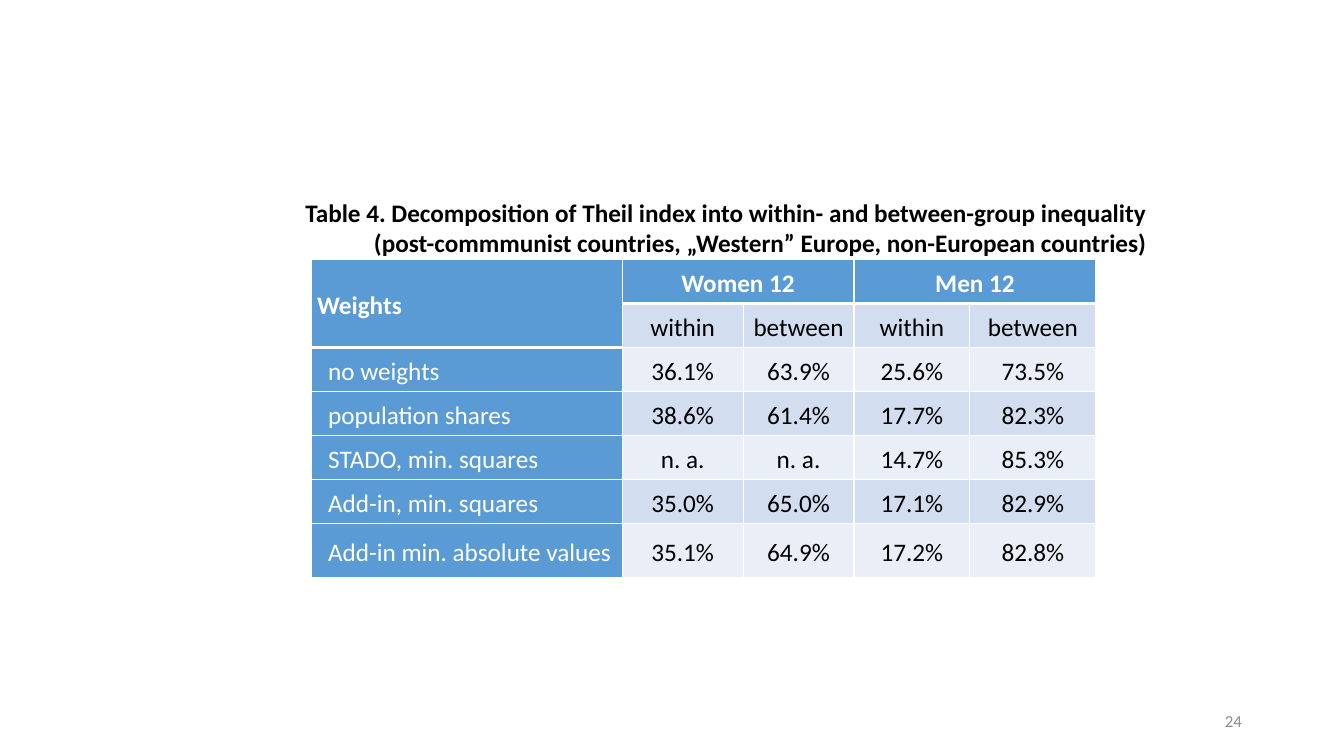
from lxml import etree
from pptx import Presentation
from pptx.dml.color import RGBColor
from pptx.enum.text import MSO_ANCHOR, MSO_AUTO_SIZE, PP_ALIGN
from pptx.oxml.ns import qn
from pptx.util import Cm, Pt

LEFT, CENTER, RIGHT = PP_ALIGN.LEFT, PP_ALIGN.CENTER, PP_ALIGN.RIGHT
MIDDLE = MSO_ANCHOR.MIDDLE
GROW = MSO_AUTO_SIZE.SHAPE_TO_FIT_TEXT

WHITE = RGBColor(0xFF, 0xFF, 0xFF)
BLACK = RGBColor(0x00, 0x00, 0x00)
GRAY = RGBColor(0x8C, 0x8C, 0x8C)
BLUE = RGBColor(0x5B, 0x9B, 0xD5)
DARK_BAND = RGBColor(0xD2, 0xDE, 0xEF)
LIGHT_BAND = RGBColor(0xEA, 0xEF, 0xF7)

CAPTION = [
    "Table 4. Decomposition of Theil index into within- and between-group inequality",
    "(post-commmunist countries, „Western” Europe, non-European countries)",
]
ROWS = [
    ["Weights", "Women 12", "", "Men 12", ""],
    ["", "within", "between", "within", "between"],
    ["no weights", "36.1%", "63.9%", "25.6%", "73.5%"],
    ["population shares", "38.6%", "61.4%", "17.7%", "82.3%"],
    ["STADO, min. squares", "n. a.", "n. a.", "14.7%", "85.3%"],
    ["Add-in, min. squares", "35.0%", "65.0%", "17.1%", "82.9%"],
    ["Add-in min. absolute values", "35.1%", "64.9%", "17.2%", "82.8%"],
]
COLUMN_WIDTHS = [7.82, 3.05, 2.79, 2.92, 3.18]
ROW_HEIGHTS = [1.11] * 6 + [1.35]


def write(para, text, align, size, color, bold=False):
    para.alignment = align
    span = para.add_run()
    span.text = text
    span.font.color.rgb = color
    for name, value in {"name": "Calibri", "size": Pt(size), "bold": bold}.items():
        setattr(span.font, name, value)


def add_border(cell, side, width):
    """Draw a white line of the given point width on side L, R, T or B."""
    line = etree.SubElement(cell._tc.get_or_add_tcPr(), qn(f"a:ln{side}"), w=str(Pt(width)))
    fill = etree.SubElement(line, qn("a:solidFill"))
    etree.SubElement(fill, qn("a:srgbClr"), val=str(WHITE))


deck = Presentation()
deck.slide_width, deck.slide_height = Cm(33.87), Cm(19.05)
page = deck.slides.add_slide(deck.slide_layouts[5])

# Table
frame = page.shapes.add_table(
    len(ROWS), len(COLUMN_WIDTHS), Cm(7.86), Cm(6.54), Cm(sum(COLUMN_WIDTHS)), Cm(sum(ROW_HEIGHTS))
)
table = frame.table
for column, width in zip(table.columns, COLUMN_WIDTHS):
    column.width = Cm(width)
for row, height in zip(table.rows, ROW_HEIGHTS):
    row.height = Cm(height)

for r, texts in enumerate(ROWS):
    for c, text in enumerate(texts):
        cell = table.cell(r, c)
        is_label = c == 0
        is_header = r == 0 or is_label
        last_header_row = 1 if is_label else 0
        add_border(cell, "L", 1)
        add_border(cell, "R", 1)
        add_border(cell, "T", 3 if r == last_header_row + 1 else 1)
        add_border(cell, "B", 3 if r <= last_header_row else 1)
        cell.fill.solid()
        cell.fill.fore_color.rgb = BLUE if is_header else DARK_BAND if r % 2 else LIGHT_BAND
        cell_format = {
            "vertical_anchor": MIDDLE,
            "margin_left": Cm(0.41 if is_label and r > 1 else 0.13),
            "margin_right": Cm(0.13),
            "margin_top": 0,
            "margin_bottom": 0,
        }
        for name, value in cell_format.items():
            setattr(cell, name, value)
        if text:
            para = cell.text_frame.paragraphs[0]
            para.line_spacing = 1.15
            write(para, text, LEFT if is_label else CENTER, 18,
                  WHITE if is_header else BLACK, bold=r == 0)

for first, last in [((0, 0), (1, 0)), ((0, 1), (0, 2)), ((0, 3), (0, 4))]:
    table.cell(*first).merge(table.cell(*last))

# Caption
caption = page.shapes.title
number = page.shapes.add_textbox(Cm(23.93), Cm(17.65), Cm(7.62), Cm(1.02))
caption_place = {"left": Cm(7.44), "top": Cm(4.83), "width": Cm(21.87), "height": Cm(1.8)}
for name, value in caption_place.items():
    setattr(caption, name, value)
for box in (caption, number):
    box.text_frame.word_wrap = True
    box.text_frame.vertical_anchor = MIDDLE
caption.text_frame.auto_size = GROW
first_line = caption.text_frame.paragraphs[0]
second_line = caption.text_frame.add_paragraph()
for para, text in zip((first_line, second_line), CAPTION):
    write(para, text, LEFT, 18, BLACK, bold=True)
second_line._p.get_or_add_pPr().set("marL", str(Cm(1.73)))

# Slide number
write(number.text_frame.paragraphs[0], "24", RIGHT, 12, GRAY)

deck.save("out.pptx")
